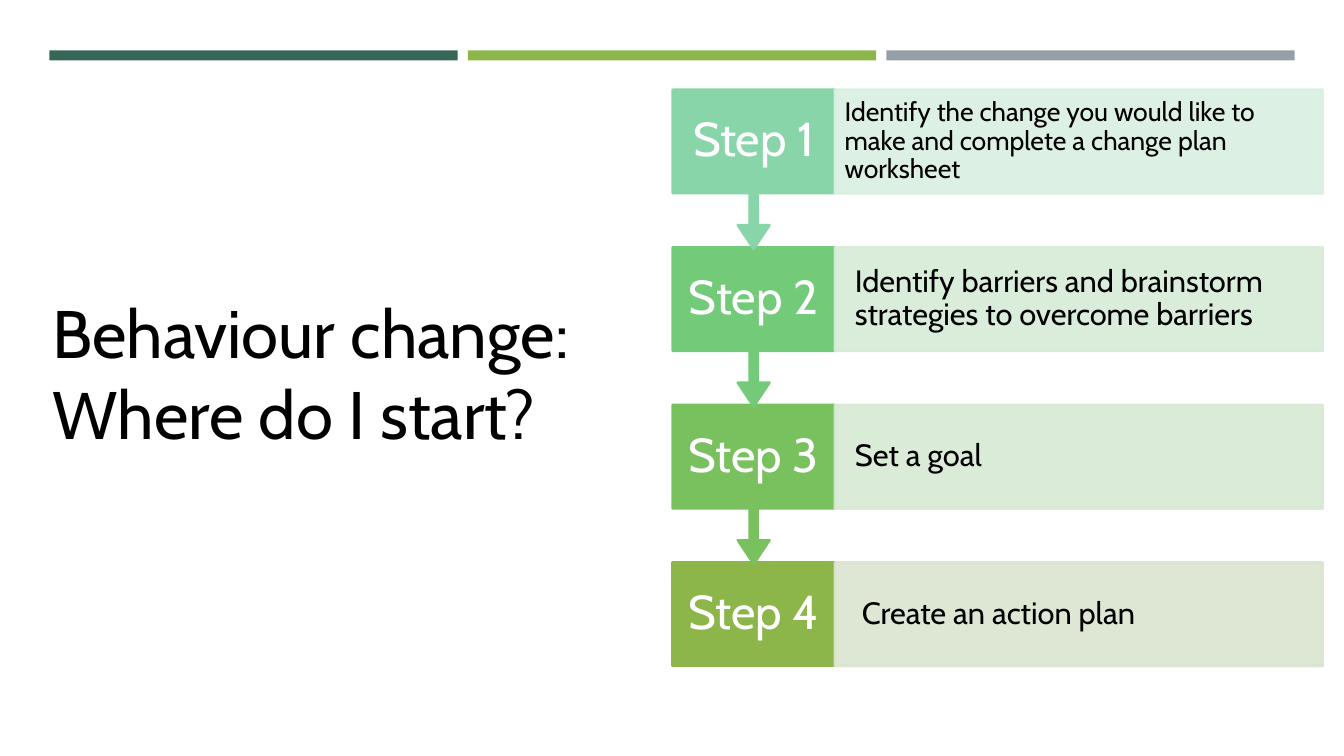
"""Build the behaviour change slide with its four steps."""
from lxml import etree
from pptx import Presentation
from pptx.dml.color import RGBColor
from pptx.enum.shapes import MSO_SHAPE
from pptx.enum.text import MSO_ANCHOR, MSO_AUTO_SIZE, PP_ALIGN
from pptx.oxml.ns import qn
from pptx.util import Inches, Pt

RECT = MSO_SHAPE.RECTANGLE
CALLOUT = MSO_SHAPE.DOWN_ARROW_CALLOUT
LEFT, CENTER = PP_ALIGN.LEFT, PP_ALIGN.CENTER
MIDDLE = MSO_ANCHOR.MIDDLE
NO_FIT = MSO_AUTO_SIZE.NONE

BAR_COLOURS = ["366658", "8CB64A", "969FA7"]
STEPS = [
    ("88D5A9", "DAEFE2", 19, 0.1,
     "Identify the change you would like to make and complete a change plan worksheet"),
    ("73CB7A", "D6ECD8", 22, 0.2,
     "Identify barriers and brainstorm strategies to overcome barriers"),
    ("78C15E", "D7E9D3", 22, 0.2, "Set a goal"),
    ("8CB64A", "DAE5D0", 22, 0.2, " Create an action plan"),
]


def colour(hex_code):
    """Turn a hex string into a colour."""
    return RGBColor.from_string(hex_code)


def assign(target, values):
    """Set each named attribute on the target."""
    for name, value in values.items():
        setattr(target, name, value)


class SlideBuilder:
    """Hold the slide and its text style."""

    font = "Cabin"

    def __init__(self, slide):
        """Keep the slide to draw on."""
        self.slide = slide

    def label(self, shape, text, size, ink, align=LEFT, inset=0.1, spacing=0.9):
        """Put formatted text in a shape."""
        frame = shape.text_frame
        frame.text = text
        assign(frame, {
            "word_wrap": True, "auto_size": NO_FIT, "vertical_anchor": MIDDLE,
            "margin_left": Inches(inset), "margin_right": Inches(0.1),
            "margin_top": Inches(0.05), "margin_bottom": Inches(0.05),
        })
        paragraph = frame.paragraphs[0]
        assign(paragraph, {"alignment": align, "line_spacing": spacing})
        for run in paragraph.runs:
            assign(run.font, {"name": self.font, "size": Pt(size)})
            run.font.color.rgb = colour(ink)

    def title(self, text, box):
        """Place and format the title placeholder."""
        heading = self.slide.shapes.title
        assign(heading, dict(zip(("left", "top", "width", "height"), map(Inches, box))))
        self.label(heading, text, 48, "000000", spacing=1.0)

    def block(self, kind, box, fill, outlined=True, opacity=100):
        """Draw a filled shape."""
        shape = self.slide.shapes.add_shape(kind, *map(Inches, box))
        shape.shadow.inherit = False
        shape.fill.solid()
        shape.fill.fore_color.rgb = colour(fill)
        if outlined:
            shape.line.color.rgb = colour(fill)
            shape.line.width = Pt(1.75)
        else:
            shape.line.fill.background()
        if opacity < 100:
            for tint in shape.element.spPr.iter(qn("a:srgbClr")):
                etree.SubElement(tint, qn("a:alpha")).set("val", str(opacity * 1000))
        return shape

    def step(self, number, top, fill, tint, size, inset, text):
        """Draw one step with its description, and an arrow unless it is last."""
        height = 1.03
        if number < len(STEPS):
            marker = self.block(CALLOUT, (6.67, top, 1.61, 1.58), fill)
            for index, value in enumerate((0.05, 0.1, 0.15, 0.65)):
                marker.adjustments[index] = value
        else:
            marker = self.block(RECT, (6.67, top, 1.61, height), fill)
        self.label(marker, f"Step {number}", 34, "FFFFFF", CENTER)
        description = self.block(RECT, (8.28, top, 4.84, height), tint, opacity=90)
        self.label(description, text, size, "000000", inset=inset)


def main():
    """Build and save the slide."""
    deck = Presentation()
    deck.slide_width, deck.slide_height = Inches(13.33), Inches(7.5)
    builder = SlideBuilder(deck.slides.add_slide(deck.slide_layouts[5]))
    for index, bar_colour in enumerate(BAR_COLOURS):
        builder.block(RECT, (0.49 + 4.15 * index, 0.5, 4.05, 0.1), bar_colour, False)
    step_pitch = (5.58 - 0.89) / (len(STEPS) - 1)
    for index, step in reversed(list(enumerate(STEPS))):
        builder.step(index + 1, 0.89 + step_pitch * index, *step)
    builder.title("Behaviour change:\vWhere do I start?", (0.42, 2.83, 5.6, 1.72))
    deck.save("out.pptx")


if __name__ == "__main__":
    main()
